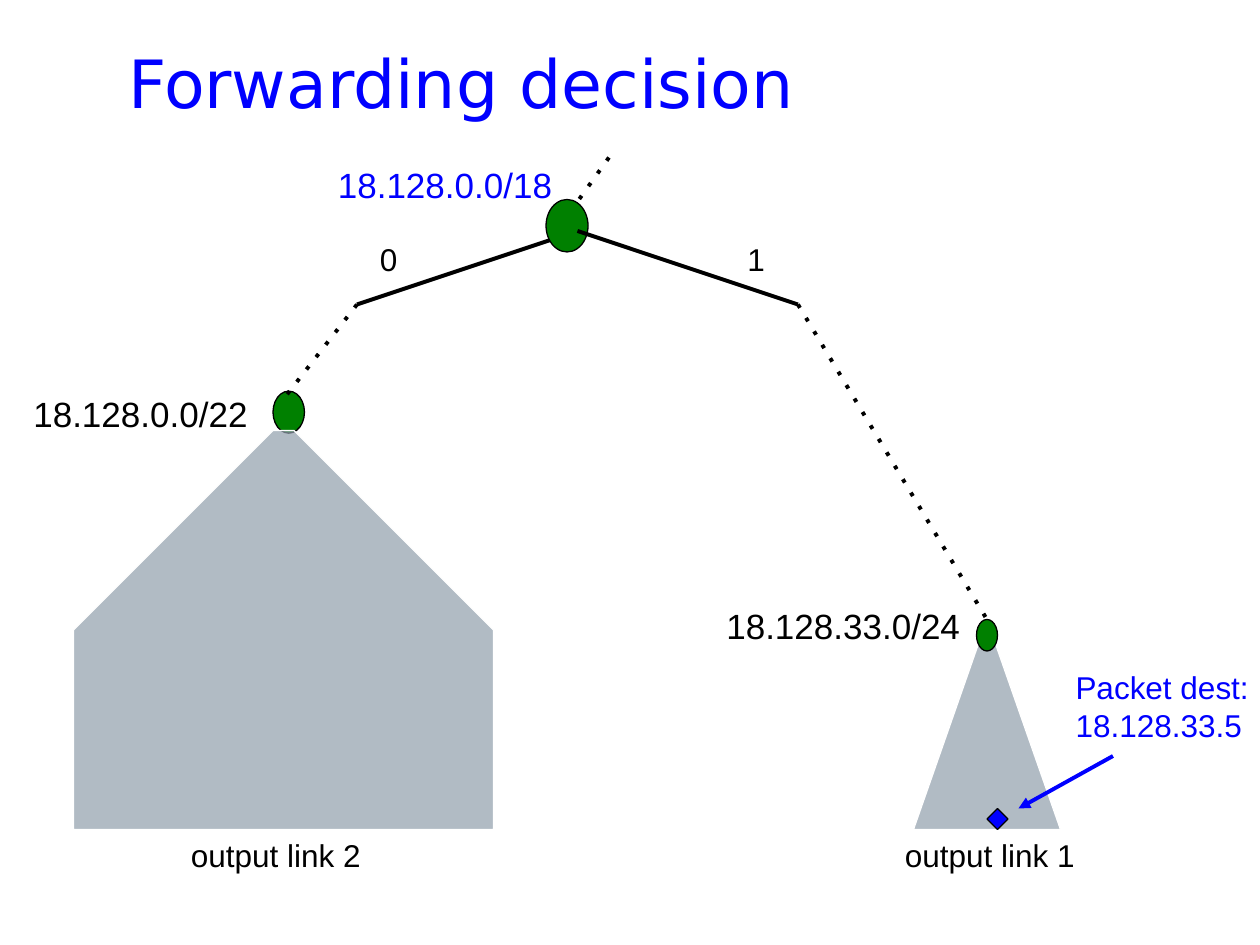
from pptx import Presentation
from pptx.dml.color import RGBColor
from pptx.enum.shapes import MSO_CONNECTOR, MSO_SHAPE
from pptx.enum.text import MSO_ANCHOR, MSO_AUTO_SIZE, PP_ALIGN
from pptx.oxml.xmlchemy import OxmlElement
from pptx.util import Pt

BLACK = RGBColor(0x00, 0x00, 0x00)
BLUE = RGBColor(0x00, 0x00, 0xFF)
GREEN = RGBColor(0x00, 0x80, 0x00)
GRAY = RGBColor(0x92, 0xA0, 0xAD)
WHITE = RGBColor(0xFF, 0xFF, 0xFF)

STRAIGHT = MSO_CONNECTOR.STRAIGHT
OVAL, DIAMOND = MSO_SHAPE.OVAL, MSO_SHAPE.DIAMOND
TRIANGLE, HOUSE = MSO_SHAPE.ISOSCELES_TRIANGLE, MSO_SHAPE.SNIP_2_SAME_RECTANGLE
MIDDLE, LEFT = MSO_ANCHOR.MIDDLE, PP_ALIGN.LEFT
NO_FIT, GROW = MSO_AUTO_SIZE.NONE, MSO_AUTO_SIZE.SHAPE_TO_FIT_TEXT

ROOT, LEFT_FORK, RIGHT_FORK = (330, 132), (204, 174), (456, 174)
LINK_2, LINK_1 = (162, 228), (564, 354)


def apply(target, **values):
    """Set each named attribute on the target."""
    for name, value in values.items():
        setattr(target, name, value)


class Diagram:
    """Draws styled elements on the current slide."""

    def __init__(self, slide):
        self.s = slide
        self.label_font = {"name": "Arial", "size": Pt(18)}
        self.title_font = {"name": "DejaVu Sans", "size": Pt(38)}

    def title(self, text, x, y, w, h):
        sp = self.s.shapes.title
        apply(sp, left=Pt(x), top=Pt(y), width=Pt(w), height=Pt(h))
        tf = sp.text_frame
        tf.text = text
        apply(tf, vertical_anchor=MIDDLE, auto_size=NO_FIT, word_wrap=True)
        p = tf.paragraphs[0]
        apply(p, alignment=LEFT, line_spacing=0.8)
        apply(p.font, **self.title_font)
        p.font.color.rgb = BLUE

    def label(self, text, x, y, w, h=28.8, color=BLACK, **font):
        tf = self.s.shapes.add_textbox(Pt(x), Pt(y), Pt(w), Pt(h)).text_frame
        tf.text = text
        apply(tf, word_wrap=False, auto_size=GROW)
        for p in tf.paragraphs:
            apply(p.font, **(self.label_font | font))
            p.font.color.rgb = color

    def shape(self, kind, x, y, w, h, fill, line=BLACK, alpha=None, adjust=()):
        sp = self.s.shapes.add_shape(kind, Pt(x), Pt(y), Pt(w), Pt(h))
        sp.shadow.inherit = False
        for i, value in enumerate(adjust):
            sp.adjustments[i] = value
        sp.fill.solid()
        sp.fill.fore_color.rgb = fill
        sp.line.color.rgb = line
        sp.line.width = Pt(0.75)
        if alpha:
            clr = sp.fill._xPr.find(".//{*}srgbClr")
            a = OxmlElement("a:alpha")
            a.set("val", str(alpha * 1000))
            clr.append(a)

    def line(self, start, end, color=BLACK, dotted=False, arrow=False):
        cxn = self.s.shapes.add_connector(STRAIGHT, *map(Pt, start + end))
        cxn.line.color.rgb = color
        cxn.line.width = Pt(2.25)
        ln = cxn.line._get_or_add_ln()
        for wanted, tag, key, value in (
            (dotted, "a:prstDash", "val", "dot"),
            (arrow, "a:tailEnd", "type", "triangle"),
        ):
            if wanted:
                el = OxmlElement(tag)
                el.set(key, value)
                ln.append(el)
        cxn._element.spPr.append(OxmlElement("a:effectLst"))


def main():
    prs = Presentation()
    apply(prs, slide_width=Pt(720), slide_height=Pt(540))
    d = Diagram(prs.slides.add_slide(prs.slide_layouts[5]))
    prefix = {"h": 31.5, "size": Pt(20)}
    subtree = {"fill": GRAY, "line": WHITE, "alpha": 71}

    d.title("Forwarding decision", 66, 18, 636, 66)
    d.line(ROOT, LEFT_FORK)
    for bit, x in (("0", 210), ("1", 420)):
        d.label(bit, x, 133.5, 24.5)
    d.shape(OVAL, 156, 223.5, 18, 24, GREEN)
    d.shape(HOUSE, 42, 246, 240, 228, adjust=(0.5, 0), **subtree)
    d.shape(TRIANGLE, 522, 354, 84, 120, **subtree)
    d.line((348, 90), (318, 132), dotted=True)
    d.line(LEFT_FORK, LINK_2, dotted=True)
    d.label("18.128.0.0/18", 186, 90, 138, color=BLUE, **prefix)
    d.shape(OVAL, 312, 114, 24, 30, GREEN)
    d.label("18.128.0.0/22", 12, 220.5, 138, **prefix)
    d.line(ROOT, RIGHT_FORK)
    d.line(RIGHT_FORK, LINK_1, dotted=True)
    d.label("18.128.33.0/24", 408, 342, 149, **prefix)
    d.shape(OVAL, 558, 354, 12, 18, GREEN)
    d.label("Packet dest:\n18.128.33.5", 607.5, 378, 114.5, 51, BLUE)
    for name, x in (("output link 2", 102), ("output link 1", 510)):
        d.label(name, x, 474, 112)
    d.shape(DIAMOND, 564, 462, 12, 12, BLUE)
    d.line((636, 432), (582, 462), BLUE, arrow=True)

    prs.save("out.pptx")


if __name__ == "__main__":
    main()
